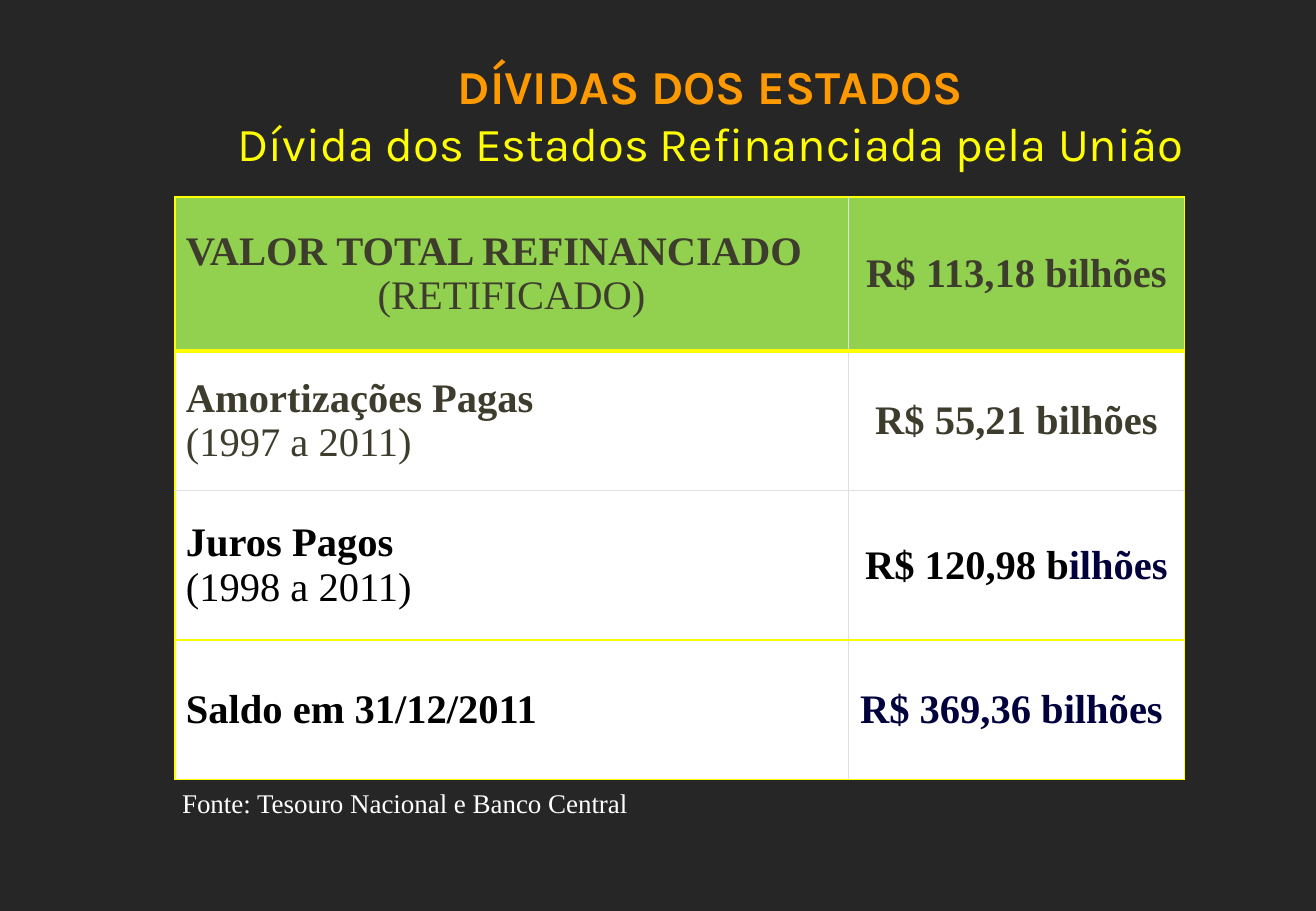
"""Builds the slide on state debts refinanced by the Union."""
import pptx
import pptx.util
import pptx.dml.color
import pptx.enum.text
import pptx.oxml
import pptx.oxml.ns

Inches = pptx.util.Inches
LEFT = pptx.enum.text.PP_ALIGN.LEFT
CENTER = pptx.enum.text.PP_ALIGN.CENTER
MIDDLE = pptx.enum.text.MSO_ANCHOR.MIDDLE
TOP = pptx.enum.text.MSO_ANCHOR.TOP

COLORS = {
    "background": "262626", "orange": "FF9900", "yellow": "FFFF00",
    "white": "FFFFFF", "green": "92D050", "olive": "3E3D2D",
    "black": "000000", "navy": "00003D", "grid": "E0E0E0",
}
BODY_FONT = "Times New Roman"

HEADING = [
    (CENTER, [("DÍVIDAS DOS ESTADOS", "orange", True)]),
    (CENTER, [("Dívida dos Estados Refinanciada pela União", "yellow", False)]),
]
SOURCE = [(LEFT, [("Fonte: Tesouro Nacional e Banco Central", "white", False)])]
DEBTS = [
    ([(LEFT, [("VALOR TOTAL REFINANCIADO", "olive", True)]),
      (CENTER, [("(RETIFICADO)", "olive", False)])],
     [(CENTER, [("R$ 113,18 bilhões", "olive", True)])]),
    ([(LEFT, [("Amortizações Pagas", "olive", True)]),
      (LEFT, [("(1997 a 2011)", "olive", False)])],
     [(CENTER, [("R$ 55,21 bilhões", "olive", True)])]),
    ([(LEFT, [("Juros Pagos", "black", True)]),
      (LEFT, [("(1998 a 2011)", "black", False)])],
     [(CENTER, [("R$ 120,98 b", "black", True), ("ilhões", "navy", True)])]),
    ([(LEFT, [("Saldo em 31/12/2011", "black", True)])],
     [(CENTER, [("R$ 369,36 bilhões ", "navy", True)])]),
]
COLUMN_WIDTHS = [5.54, 2.77]
ROW_HEIGHTS = [1.27, 1.15, 1.23, 1.15]
ROW_RULES = [("yellow", 1), ("yellow", 3), ("grid", 0.5), ("yellow", 1), ("yellow", 1)]
COLUMN_RULES = [("yellow", 1), ("grid", 0.5), ("yellow", 1)]


def rgb(name):
    """Returns the named colour."""
    return pptx.dml.color.RGBColor.from_string(COLORS[name])


def write(frame, paragraphs, size, font=BODY_FONT):
    """Fills a text frame with aligned paragraphs of coloured runs."""
    for index, (alignment, runs) in enumerate(paragraphs):
        paragraph = frame.add_paragraph() if index else frame.paragraphs[0]
        paragraph.alignment = alignment
        for text, color, bold in runs:
            run = paragraph.add_run()
            run.text = text
            run.font.name = font
            run.font.size = pptx.util.Pt(size)
            run.font.bold = bold
            run.font.color.rgb = rgb(color)


def set_borders(cell, rules):
    """Adds left, right, top and bottom rules ahead of the cell fill."""
    properties = cell._tc.get_or_add_tcPr()
    for position, (side, (color, points)) in enumerate(zip("LRTB", rules)):
        properties.insert(position, pptx.oxml.parse_xml(
            f'<a:ln{side} {pptx.oxml.ns.nsdecls("a")} w="{pptx.util.Pt(points)}">'
            f'<a:solidFill><a:srgbClr val="{COLORS[color]}"/></a:solidFill></a:ln{side}>'))


def main():
    """Lays out the heading, the debt table and its source."""
    deck = pptx.Presentation()
    deck.slide_width, deck.slide_height = Inches(10.83), Inches(7.5)
    slide = deck.slides.add_slide(deck.slide_layouts[5])
    slide.background.fill.solid()
    slide.background.fill.fore_color.rgb = rgb("background")

    title = slide.shapes.title
    title.left, title.top = Inches(0.61), Inches(0.42)
    title.width, title.height = Inches(10.47), Inches(1.04)
    title.text_frame.vertical_anchor = TOP
    title.text_frame.auto_size = pptx.enum.text.MSO_AUTO_SIZE.NONE
    write(title.text_frame, HEADING, 28, font="Karla")

    debts = slide.shapes.add_table(
        len(DEBTS), len(COLUMN_WIDTHS), Inches(1.44), Inches(1.62),
        Inches(sum(COLUMN_WIDTHS)), Inches(sum(ROW_HEIGHTS))).table
    for column, width in zip(debts.columns, COLUMN_WIDTHS):
        column.width = Inches(width)
    for r, (height, entries) in enumerate(zip(ROW_HEIGHTS, DEBTS)):
        debts.rows[r].height = Inches(height)
        for c, paragraphs in enumerate(entries):
            cell = debts.cell(r, c)
            cell.vertical_anchor = MIDDLE
            cell.margin_left = cell.margin_right = Inches(0.09)
            cell.fill.solid()
            cell.fill.fore_color.rgb = rgb("white" if r else "green")
            set_borders(cell, COLUMN_RULES[c:c + 2] + ROW_RULES[r:r + 2])
            write(cell.text_frame, paragraphs, 24)

    source = slide.shapes.add_textbox(Inches(1.4), Inches(6.43), Inches(7.32), Inches(0.37))
    source.text_frame.word_wrap = True
    write(source.text_frame, SOURCE, 16)

    deck.save("out.pptx")


if __name__ == "__main__":
    main()
